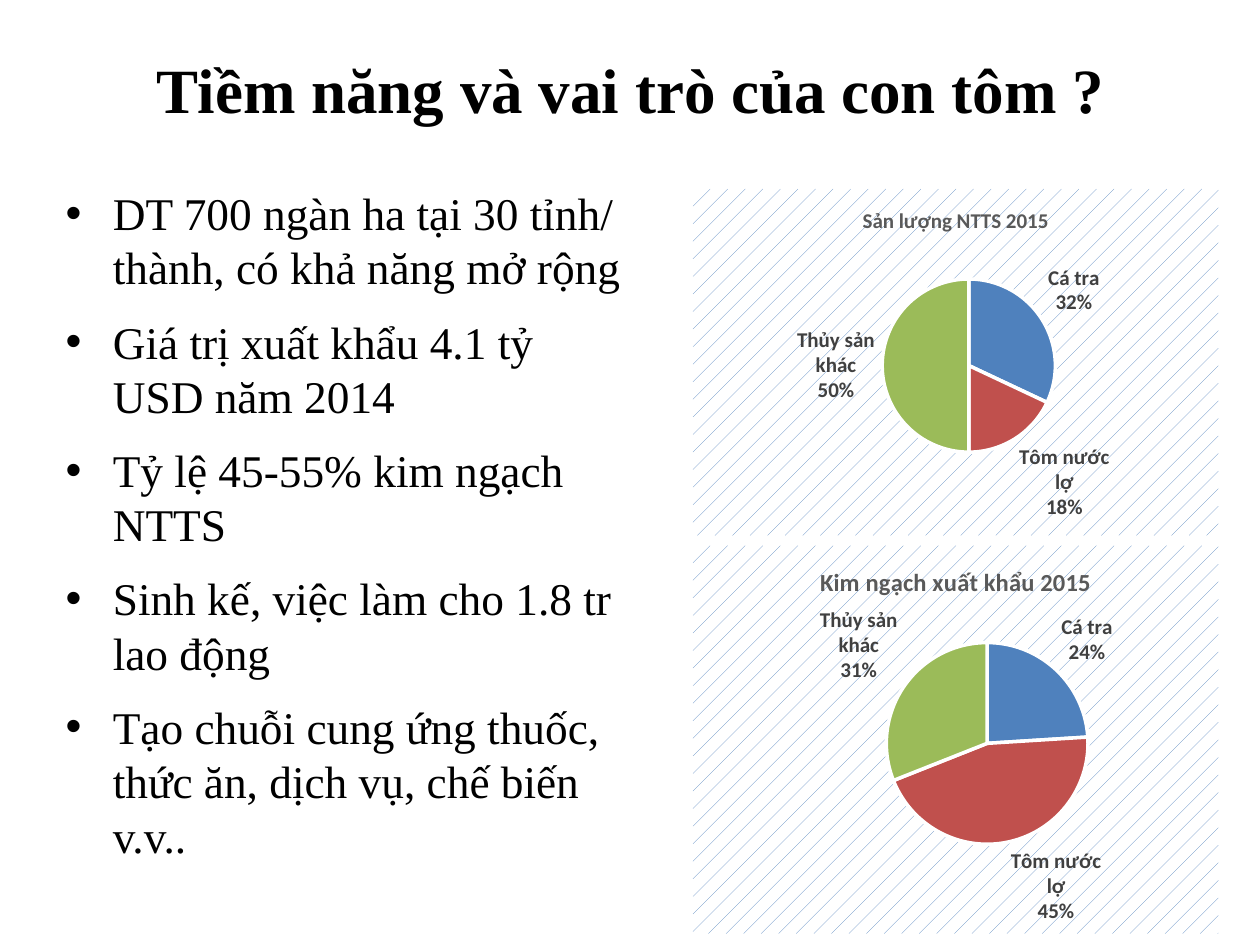
from dataclasses import dataclass

from lxml.etree import SubElement
from pptx import Presentation
from pptx.chart.chart import Chart
from pptx.chart.data import CategoryChartData
from pptx.dml.color import RGBColor
from pptx.enum.chart import XL_CHART_TYPE, XL_LABEL_POSITION
from pptx.enum.text import MSO_ANCHOR, MSO_AUTO_SIZE, PP_ALIGN
from pptx.oxml import parse_xml
from pptx.oxml.ns import nsdecls, qn
from pptx.slide import Slide
from pptx.text.text import Font
from pptx.util import Inches, Pt

COLORS = {
    "text": "000000",
    "heading": "595959",
    "label": "404040",
    "white": "FFFFFF",
    "blue": "4F81BD",
    "red": "C0504D",
    "green": "9BBB59",
}
SLICES = {"Cá tra": "blue", "Tôm nước lợ": "red", "Thủy sản khác": "green"}
TITLE = "Tiềm năng và vai trò của con tôm ?"
POINTS = [
    "DT 700 ngàn ha tại 30 tỉnh/ thành, có khả năng mở rộng",
    "Giá trị xuất khẩu 4.1 tỷ USD năm 2014",
    "Tỷ lệ 45-55% kim ngạch NTTS",
    "Sinh kế, việc làm cho 1.8 tr lao động",
    "Tạo chuỗi cung ứng thuốc, thức ăn, dịch vụ, chế biến v.v..",
]


@dataclass(frozen=True)
class Pie:
    title: str
    title_size: int
    top: float
    height: float
    values: tuple[int, ...]
    plot: tuple[float, float, float, float]


PIES = [
    Pie("Sản lượng NTTS 2015", 12, 1.5, 2.75, (32, 18, 50), (0.2, 0.26, 0.65, 0.5)),
    Pie("Kim ngạch xuất khẩu 2015", 14, 4.33, 3.08, (24, 45, 31), (0.24, 0.25, 0.64, 0.52)),
]


def rgb(name: str) -> RGBColor:
    return RGBColor.from_string(COLORS[name])


def style_font(font: Font, *, size: float, color: str, name: str = "Calibri", bold: bool = False) -> None:
    font.name = name
    font.size = Pt(size)
    font.bold = bold
    font.color.rgb = rgb(color)


def fill_placeholder(box, lines: list[str], *, place: tuple[float, ...], size: float,
                     bold: bool = False, align: PP_ALIGN = PP_ALIGN.LEFT,
                     anchor: MSO_ANCHOR = MSO_ANCHOR.TOP, after: float = 0) -> None:
    box.left, box.top, box.width, box.height = map(Inches, place)
    frame = box.text_frame
    frame.text = "\n".join(lines)
    frame.word_wrap = True
    frame.auto_size = MSO_AUTO_SIZE.NONE
    frame.vertical_anchor = anchor
    for para in frame.paragraphs:
        para.alignment = align
        para.space_after = Pt(after)
        for span in para.runs:
            style_font(span.font, size=size, color="text", name="Times New Roman", bold=bold)


def place_plot(chart: Chart, plot: tuple[float, ...]) -> None:
    area = chart._chartSpace.chart.plotArea
    for old in area.findall(qn("c:layout")):
        area.remove(old)
    layout = parse_xml(f"<c:layout {nsdecls('c')}/>")
    manual = SubElement(layout, qn("c:manualLayout"))
    settings = {"layoutTarget": "inner", "xMode": "edge", "yMode": "edge"}
    settings.update(zip("xywh", map(str, plot)))
    for tag, value in settings.items():
        SubElement(manual, qn(f"c:{tag}")).set("val", value)
    area.insert(0, layout)


def hatch_background(chart: Chart) -> None:
    properties = parse_xml(
        f'<c:spPr {nsdecls("c", "a")}><a:pattFill prst="pct5">'
        f'<a:fgClr><a:srgbClr val="{COLORS["blue"]}"/></a:fgClr>'
        f'<a:bgClr><a:srgbClr val="{COLORS["white"]}"/></a:bgClr>'
        "</a:pattFill><a:ln><a:noFill/></a:ln></c:spPr>"
    )
    chart._chartSpace.chart.addnext(properties)


def add_pie(page: Slide, pie: Pie) -> None:
    data = CategoryChartData()
    data.categories = list(SLICES)
    data.add_series("Series 1", pie.values)
    chart = page.shapes.add_chart(
        XL_CHART_TYPE.PIE, Inches(5.5), Inches(pie.top), Inches(4.17), Inches(pie.height), data
    ).chart
    style_font(chart.font, size=10, color="text")
    chart.has_legend = False
    chart.has_title = True
    chart.chart_title.include_in_layout = False
    chart.chart_title.text_frame.text = pie.title
    span = chart.chart_title.text_frame.paragraphs[0].runs[0]
    style_font(span.font, size=pie.title_size, color="heading", bold=True)

    plot = chart.plots[0]
    plot.vary_by_categories = True
    for index, color in enumerate(SLICES.values()):
        style = plot.series[0].points[index].format
        style.fill.solid()
        style.fill.fore_color.rgb = rgb(color)
        style.line.color.rgb = rgb("white")
        style.line.width = Pt(2)
    plot.has_data_labels = True
    labels = plot.data_labels
    labels.show_category_name = True
    labels.show_percentage = True
    labels.show_value = False
    labels.position = XL_LABEL_POSITION.OUTSIDE_END
    style_font(labels.font, size=12, color="label", bold=True)
    place_plot(chart, pie.plot)
    hatch_background(chart)


def main() -> None:
    """Build the slide on the role of shrimp farming."""
    deck = Presentation()
    deck.slide_width, deck.slide_height = Inches(10), Inches(7.5)
    page = deck.slides.add_slide(deck.slide_layouts[1])
    fill_placeholder(page.shapes.title, [TITLE], place=(0.17, 0.08, 9.67, 1.25), size=36,
                     bold=True, align=PP_ALIGN.CENTER, anchor=MSO_ANCHOR.MIDDLE)
    fill_placeholder(page.placeholders[1], POINTS, place=(0.42, 1.42, 4.67, 5.83), size=25.9, after=6)
    for pie in PIES:
        add_pie(page, pie)
    deck.save("out.pptx")


if __name__ == "__main__":
    main()
